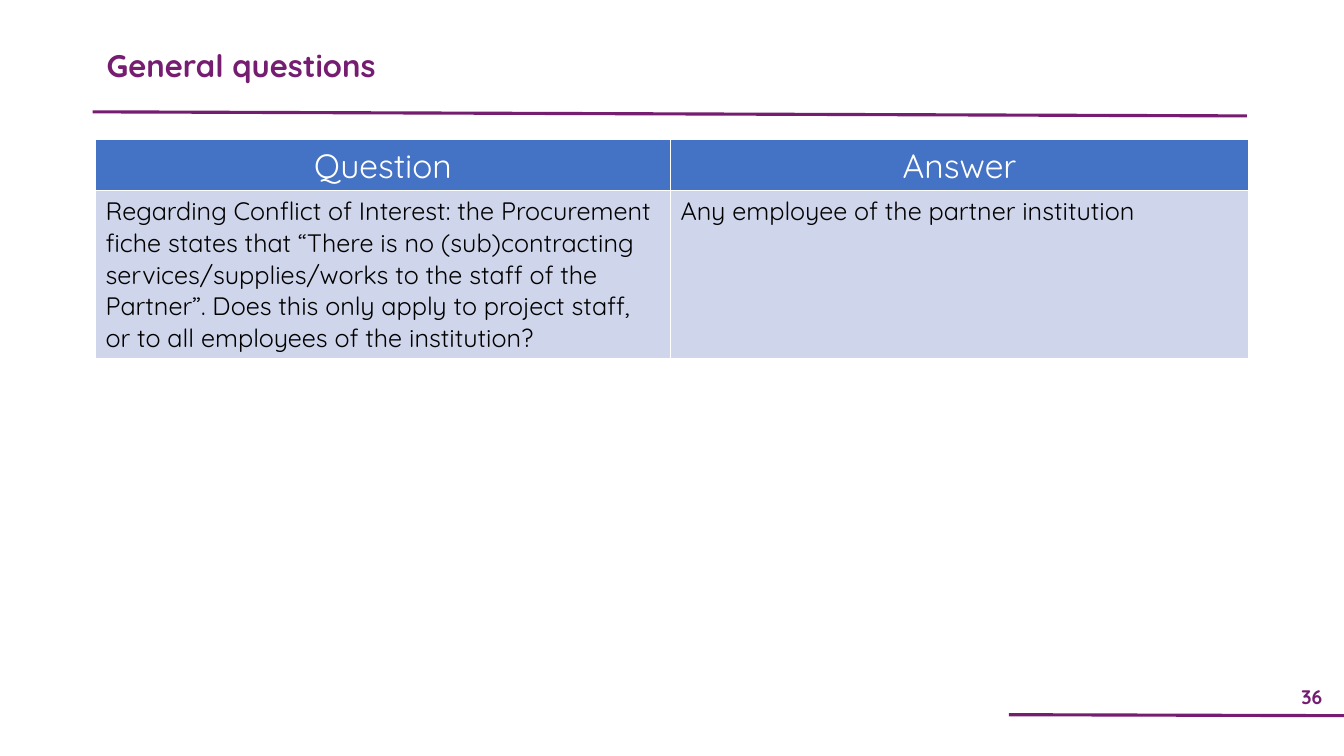
"""Build the "General questions" slide with its question and answer table."""
import pptx
import pptx.dml.color
import pptx.enum.shapes
import pptx.enum.text
import pptx.oxml
import pptx.util

Pt = pptx.util.Pt
RGBColor = pptx.dml.color.RGBColor
ALIGN = pptx.enum.text.PP_ALIGN
ANCHOR = pptx.enum.text.MSO_ANCHOR

PURPLE = RGBColor(0x75, 0x1D, 0x70)
BLUE = RGBColor(0x44, 0x72, 0xC4)
PALE_BLUE = RGBColor(0xCF, 0xD5, 0xEA)
WHITE = RGBColor(0xFF, 0xFF, 0xFF)
BLACK = RGBColor(0x00, 0x00, 0x00)
FONT = "Quicksand"


def write(tf, text, size, color, bold, align):
    tf.word_wrap = True
    p = tf.paragraphs[0]
    p.text = text
    p.alignment = align
    font = p.runs[0].font
    font.name = FONT
    font.size = Pt(size)
    font.bold = bold
    font.color.rgb = color
    return p


prs = pptx.Presentation()
prs.slide_width = Pt(960)
prs.slide_height = Pt(540)
s = prs.slides.add_slide(prs.slide_layouts[6])

rules = [(66.2, 79.9, 890.6, 82.8), (720.7, 510.5, 960, 511.2)]
for x1, y1, x2, y2 in rules:
    line = s.shapes.add_connector(
        pptx.enum.shapes.MSO_CONNECTOR.STRAIGHT, Pt(x1), Pt(y1), Pt(x2), Pt(y2))
    line.line.color.rgb = PURPLE
    line.line.width = Pt(2.25)
    line._element.spPr.append(pptx.oxml.parse_xml(
        '<a:effectLst xmlns:a="http://schemas.openxmlformats.org/drawingml/2006/main"/>'))

number = s.shapes.add_textbox(Pt(914.4), Pt(484.6), Pt(45.4), Pt(25.9))
number.text_frame.vertical_anchor = ANCHOR.MIDDLE
write(number.text_frame, "36", 14, PURPLE, True, ALIGN.CENTER)

title = s.shapes.add_textbox(Pt(69.1), Pt(34.6), Pt(700.6), Pt(30.2))
p = write(title.text_frame, "General questions", 22.2, PURPLE, True, ALIGN.JUSTIFY)
p.line_spacing = 0.8

rows = [
    ("Question", "Answer"),
    ("Regarding Conflict of Interest: the Procurement fiche states that “There is no "
     "(sub)contracting services/supplies/works to the staff of the Partner”. Does this "
     "only apply to project staff, or to all employees of the institution?",
     "Any employee of the partner institution"),
]
row_styles = [(36.5, BLUE, 24, WHITE, ALIGN.CENTER), (120, PALE_BLUE, 18, BLACK, ALIGN.LEFT)]

table = s.shapes.add_table(2, 2, Pt(68.3), Pt(99.7), Pt(823.6), Pt(156.5)).table
for column, width in zip(table.columns, (410.6, 413)):
    column.width = Pt(width)
for i, (texts, (height, fill, size, color, align)) in enumerate(zip(rows, row_styles)):
    table.rows[i].height = Pt(height)
    for j, text in enumerate(texts):
        cell = table.cell(i, j)
        cell.fill.solid()
        cell.fill.fore_color.rgb = fill
        write(cell.text_frame, text, size, color, False, align)

prs.save("out.pptx")
